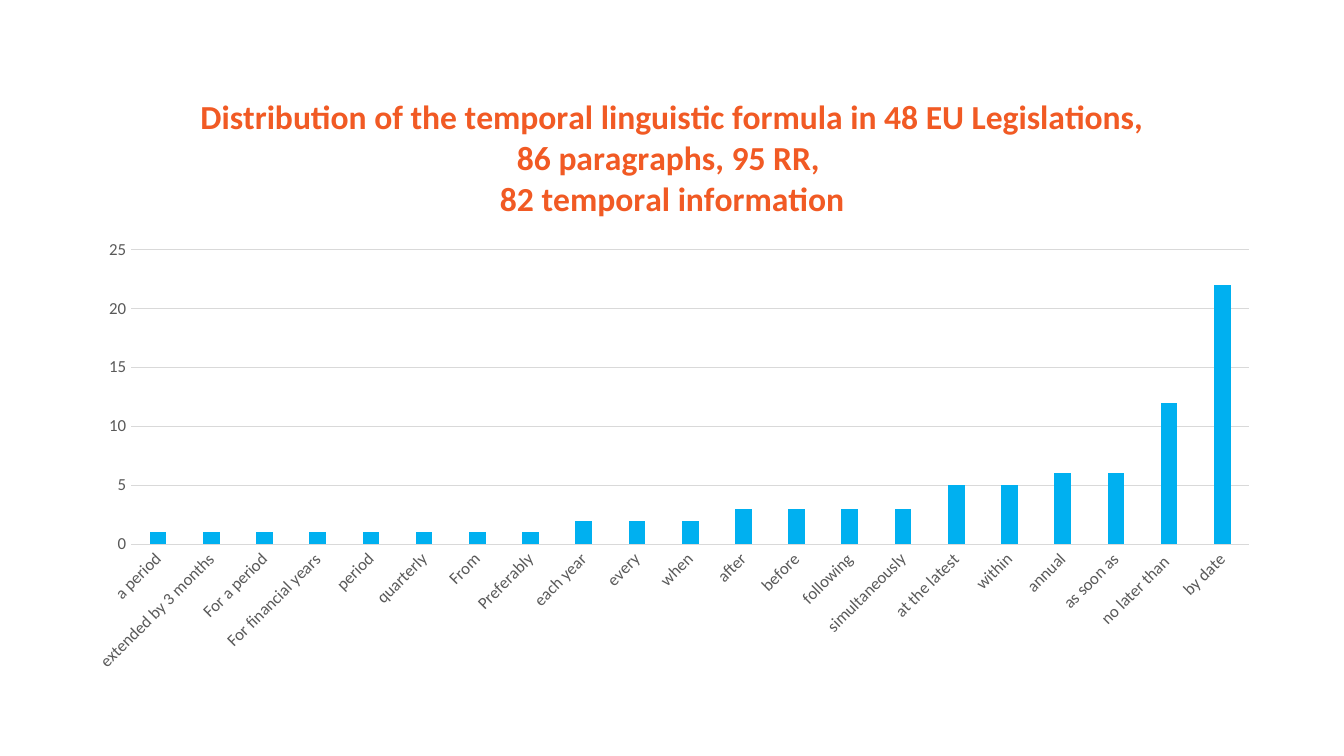
from typing import NamedTuple

from lxml import etree
from pptx import Presentation
from pptx.chart.data import CategoryChartData
from pptx.dml.color import RGBColor
from pptx.enum.chart import XL_CHART_TYPE, XL_TICK_MARK
from pptx.oxml import parse_xml
from pptx.oxml.ns import nsdecls
from pptx.util import Cm, Pt

COLUMNS = XL_CHART_TYPE.COLUMN_CLUSTERED
NO_TICK = XL_TICK_MARK.NONE
FONT = "Calibri"
COLORS = {"title": "F15A24", "bar": "00B0F0", "label": "595959", "grid": "D9D9D9"}
TITLE_LINES = [
    "Distribution of the temporal linguistic formula in 48 EU Legislations, 86 paragraphs, 95 RR, ",
    "82 temporal information",
]


class Formula(NamedTuple):
    label: str
    count: int


class Area(NamedTuple):
    x: float
    y: float
    w: float
    h: float


PLOT_AREA = Area(0.05, 0.29, 0.93, 0.48)
FORMULAS = [
    Formula("a period", 1),
    Formula("extended by 3 months", 1),
    Formula("For a period", 1),
    Formula("For financial years", 1),
    Formula("period", 1),
    Formula("quarterly", 1),
    Formula("From", 1),
    Formula("Preferably", 1),
    Formula("each year", 2),
    Formula("every", 2),
    Formula("when", 2),
    Formula("after", 3),
    Formula("before", 3),
    Formula("following", 3),
    Formula("simultaneously", 3),
    Formula("at the latest", 5),
    Formula("within", 5),
    Formula("annual", 6),
    Formula("as soon as", 6),
    Formula("no later than ", 12),
    Formula("by date", 22),
]


def color(name: str) -> RGBColor:
    return RGBColor.from_string(COLORS[name])


def style_font(font, size: float, name: str, bold: bool = False) -> None:
    font.name = FONT
    font.size = Pt(size)
    font.bold = bold
    font.color.rgb = color(name)


def style_line(line) -> None:
    line.color.rgb = color("grid")
    line.width = Pt(0.75)


def style_axis(axis) -> None:
    axis.major_tick_mark = NO_TICK
    axis.minor_tick_mark = NO_TICK
    style_font(axis.tick_labels.font, 9, "label")


def place_plot(chart, area: Area) -> None:
    plot_area = chart.plots[0]._element.getparent()
    for old in plot_area.findall("{*}layout"):
        plot_area.remove(old)
    layout = parse_xml(f"<c:layout {nsdecls('c')}><c:manualLayout/></c:layout>")
    settings = {"layoutTarget": "inner", "xMode": "edge", "yMode": "edge", **area._asdict()}
    namespace = etree.QName(layout).namespace
    for tag, value in settings.items():
        etree.SubElement(layout[0], f"{{{namespace}}}{tag}").set("val", str(value))
    plot_area.insert(0, layout)


def add_title(chart) -> None:
    frame = chart.chart_title.text_frame
    for index, text in enumerate(TITLE_LINES):
        para = frame.add_paragraph() if index else frame.paragraphs[0]
        span = para.add_run()
        span.text = text
        style_font(para.font, 18, "title", True)
        style_font(span.font, 18, "title", True)
    chart.chart_title.include_in_layout = False


def add_formula_chart(page) -> None:
    data = CategoryChartData()
    data.categories = [formula.label for formula in FORMULAS]
    data.add_series("Series 1", [formula.count for formula in FORMULAS])
    chart = page.shapes.add_chart(
        COLUMNS, Cm(1.35), Cm(1.35), Cm(22.71), Cm(11.61), data
    ).chart
    chart.font.name = FONT
    chart.font.size = Pt(10)
    chart.has_legend = False
    add_title(chart)

    plot = chart.plots[0]
    plot.gap_width = 219
    plot.overlap = -27
    plot.vary_by_categories = False
    fill = plot.series[0].format.fill
    fill.solid()
    fill.fore_color.rgb = color("bar")

    categories, values = chart.category_axis, chart.value_axis
    style_axis(categories)
    style_axis(values)
    style_line(categories.format.line)
    categories.tick_labels.font._element.getparent().getparent().getparent().find(
        "{*}bodyPr"
    ).set("rot", "-2700000")
    values.format.line.fill.background()
    values.minimum_scale, values.maximum_scale, values.major_unit = 0, 25, 5
    style_line(values.major_gridlines.format.line)
    place_plot(chart, PLOT_AREA)


def main() -> None:
    deck = Presentation()
    deck.slide_width, deck.slide_height = Cm(25.4), Cm(14.29)
    page = deck.slides.add_slide(deck.slide_layouts[6])
    add_formula_chart(page)
    deck.save("out.pptx")


if __name__ == "__main__":
    main()
